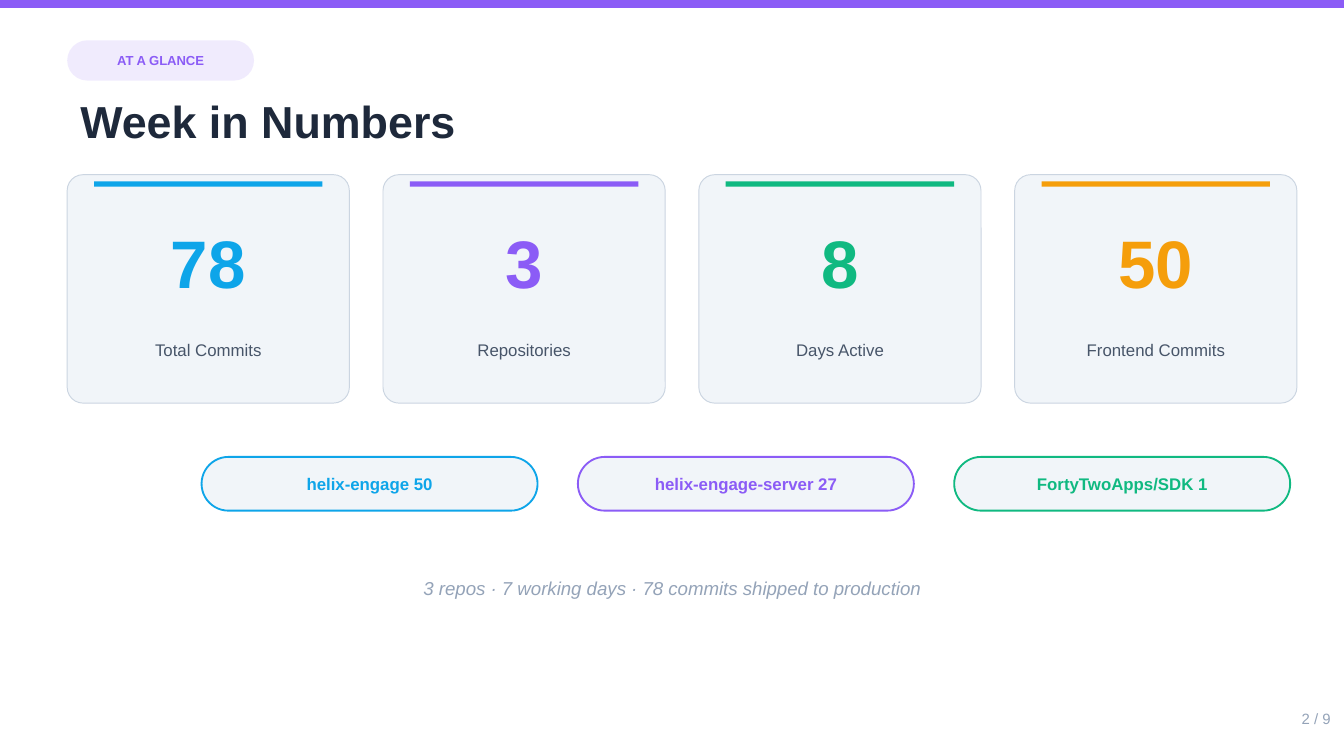
from dataclasses import dataclass

from lxml import etree
from pptx import Presentation
from pptx.dml.color import RGBColor
from pptx.enum.shapes import MSO_SHAPE
from pptx.enum.text import MSO_ANCHOR, PP_ALIGN
from pptx.oxml.ns import qn
from pptx.util import Inches, Pt


@dataclass(frozen=True)
class Theme:
    font: str = "Arial"
    blue: str = "0EA5E9"
    violet: str = "8B5CF6"
    green: str = "10B981"
    amber: str = "F59E0B"
    heading: str = "1E293B"
    body: str = "475569"
    muted: str = "94A3B8"
    panel: str = "F1F5F9"
    border: str = "CBD5E1"
    tag_size: float = 7
    page_size: float = 8
    label_size: float = 9
    caption_size: float = 10
    title_size: float = 24
    number_size: float = 36


THEME = Theme()


def add_box(slide, kind, left, top, width, height, fill,
            line=None, line_width=1, radius=None, opacity=None):
    """Draw a filled preset shape; radius is a share of the shorter side."""
    shape = slide.shapes.add_shape(
        kind, Inches(left), Inches(top), Inches(width), Inches(height))
    shape.shadow.inherit = False
    shape.fill.solid()
    shape.fill.fore_color.rgb = RGBColor.from_string(fill)
    if radius is not None:
        shape.adjustments[0] = radius
    if line:
        shape.line.color.rgb = RGBColor.from_string(line)
        shape.line.width = Pt(line_width)
    else:
        shape.line.fill.background()
    if opacity is not None:
        solid_fill = shape.element.spPr.find(qn("a:solidFill"))
        color = solid_fill.find(qn("a:srgbClr"))
        etree.SubElement(color, qn("a:alpha"), val=str(opacity * 1000))


def add_text(slide, text, left, top, width, height, size, color,
             align=PP_ALIGN.CENTER, bold=False, italic=False):
    """Place one vertically centred line of text."""
    text_box = slide.shapes.add_textbox(
        Inches(left), Inches(top), Inches(width), Inches(height))
    text_frame = text_box.text_frame
    text_frame.word_wrap = True
    text_frame.vertical_anchor = MSO_ANCHOR.MIDDLE
    text_frame.text = text
    paragraph = text_frame.paragraphs[0]
    paragraph.alignment = align
    font = paragraph.runs[0].font
    font.name = THEME.font
    font.size = Pt(size)
    font.bold = bold
    font.italic = italic
    font.color.rgb = RGBColor.from_string(color)


def add_pill(slide, text, left, top, width, height, size, color, fill,
             line=None, opacity=None):
    add_box(slide, MSO_SHAPE.ROUNDED_RECTANGLE, left, top, width, height,
            fill, line=line, radius=0.5, opacity=opacity)
    add_text(slide, text, left, top, width, height, size, color, bold=True)


def add_header(slide, left, top, slide_width):
    # Accent band, section tag and title
    add_box(slide, MSO_SHAPE.RECTANGLE, 0, 0, slide_width, 0.06, THEME.violet)
    add_pill(slide, "AT A GLANCE", left, top, 1.39, 0.3, THEME.tag_size,
             THEME.violet, THEME.violet, opacity=12)
    add_text(slide, "Week in Numbers", left, top + 0.35, 5, 0.5,
             THEME.title_size, THEME.heading, PP_ALIGN.LEFT, bold=True)


def add_stat_card(slide, left, top, width, height, number, label, color):
    add_box(slide, MSO_SHAPE.ROUNDED_RECTANGLE, left, top, width, height,
            THEME.panel, line=THEME.border, line_width=0.5, radius=0.07)
    add_box(slide, MSO_SHAPE.RECTANGLE, left + 0.2, top + 0.05, width - 0.4,
            0.04, color)
    add_text(slide, number, left, top + 0.2, width, 0.9,
             THEME.number_size, color, bold=True)
    add_text(slide, label, left, top + 1.1, width, 0.4,
             THEME.label_size, THEME.body)


def add_stat_cards(slide, left, top, width, height, gap):
    stats = [
        ("78", "Total Commits", THEME.blue),
        ("3", "Repositories", THEME.violet),
        ("8", "Days Active", THEME.green),
        ("50", "Frontend Commits", THEME.amber),
    ]
    card_width = (width - gap * (len(stats) - 1)) / len(stats)
    for index, (number, label, color) in enumerate(stats):
        add_stat_card(slide, left + index * (card_width + gap), top,
                      card_width, height, number, label, color)


def add_repository_pills(slide, left, top, width, height, gap):
    repositories = [
        ("helix-engage 50", THEME.blue),
        ("helix-engage-server 27", THEME.violet),
        ("FortyTwoApps/SDK 1", THEME.green),
    ]
    pill_width = (width - gap * (len(repositories) - 1)) / len(repositories)
    for index, (text, color) in enumerate(repositories):
        add_pill(slide, text, left + index * (pill_width + gap), top,
                 pill_width, height, THEME.label_size, color, THEME.panel,
                 line=color)


def add_footer(slide, slide_width):
    # Summary line and page number
    add_text(slide, "3 repos · 7 working days · 78 commits shipped to production",
             1, 4.2, slide_width - 2, 0.35, THEME.caption_size, THEME.muted,
             italic=True)
    add_text(slide, "2 / 9", slide_width - 1.2, 5.2, 1.2, 0.3,
             THEME.page_size, THEME.muted, PP_ALIGN.RIGHT)


def main():
    # Widescreen 16:9 page
    slide_width = 10
    presentation = Presentation()
    presentation.slide_width = Inches(slide_width)
    presentation.slide_height = Inches(slide_width * 9 / 16)
    slide = presentation.slides.add_slide(presentation.slide_layouts[6])

    add_header(slide, 0.5, 0.3, slide_width)
    add_stat_cards(slide, 0.5, 1.3, 9.15, 1.7, gap=0.25)
    add_repository_pills(slide, 1.5, 3.4, 8.1, 0.4, gap=0.3)
    add_footer(slide, slide_width)
    presentation.save("out.pptx")


if __name__ == "__main__":
    main()
